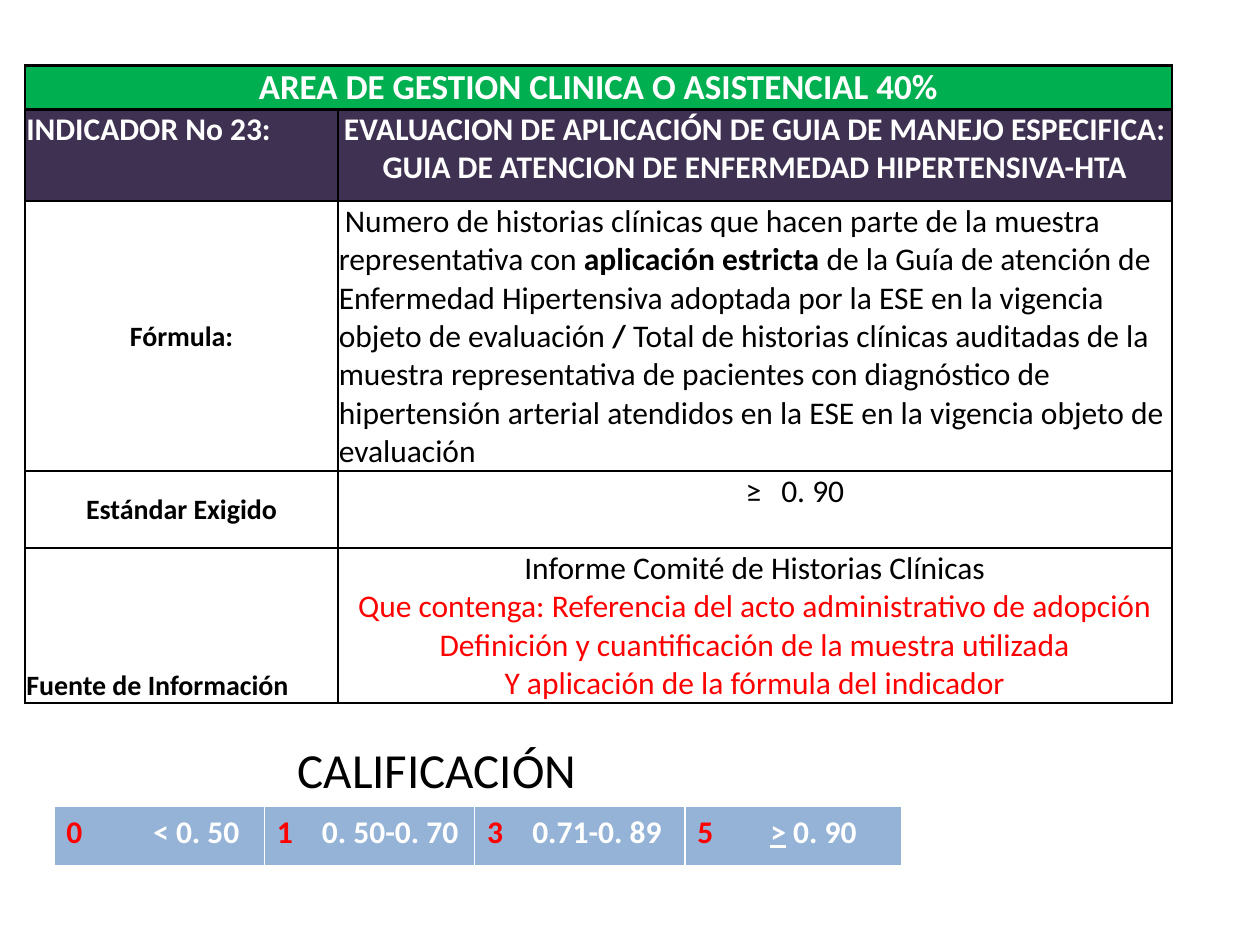
from dataclasses import dataclass

from lxml.etree import SubElement
from pptx import Presentation
from pptx.dml.color import RGBColor
from pptx.enum.text import MSO_ANCHOR, PP_ALIGN
from pptx.oxml.ns import qn
from pptx.util import Cm, Pt

COLORS = {
    "black": "000000",
    "white": "FFFFFF",
    "red": "FF0000",
    "green": "00B050",
    "purple": "3F3151",
    "blue": "95B3D7",
}
FONT = "Calibri"


@dataclass
class Span:
    text: str
    color: str = "black"
    bold: bool = False
    underline: bool = False


@dataclass
class Para:
    spans: list[Span]
    size: int = 18
    align: PP_ALIGN = PP_ALIGN.LEFT
    tabs: tuple[float, ...] = ()
    indent: float = 0


@dataclass
class CellContent:
    paras: list[Para]
    fill: str | None = None
    anchor: MSO_ANCHOR = MSO_ANCHOR.TOP


@dataclass
class Edge:
    tag: str
    color: str
    width: float


def write_para(para, content: Para) -> None:
    para.alignment = content.align
    properties = para._p.get_or_add_pPr()
    if content.indent:
        properties.set("indent", str(Cm(content.indent)))
    if content.tabs:
        stops = SubElement(properties, qn("a:tabLst"))
        for position in content.tabs:
            SubElement(stops, qn("a:tab"), pos=str(Cm(position)), algn="l")
    para.font.name = FONT
    para.font.size = Pt(content.size)
    for span in content.spans:
        run = para.add_run()
        run.text = span.text
        run.font.bold = span.bold
        run.font.color.rgb = RGBColor.from_string(COLORS[span.color])
        if span.underline:
            run.font.underline = True


def write_cell(cell, content: CellContent, margins: tuple, edges: list[Edge]) -> None:
    cell.margin_left, cell.margin_top, cell.margin_right, cell.margin_bottom = map(Cm, margins)
    cell.vertical_anchor = content.anchor
    properties = cell._tc.get_or_add_tcPr()
    for edge in edges:
        line = SubElement(properties, qn(f"a:{edge.tag}"), w=str(Pt(edge.width)))
        SubElement(SubElement(line, qn("a:solidFill")), qn("a:srgbClr"), val=COLORS[edge.color])
    if content.fill:
        cell.fill.solid()
        cell.fill.fore_color.rgb = RGBColor.from_string(COLORS[content.fill])
    else:
        cell.fill.background()
    for index, para_content in enumerate(content.paras):
        frame = cell.text_frame
        write_para(frame.add_paragraph() if index else frame.paragraphs[0], para_content)


def draw_table(page, left: float, top: float, widths: list[float], heights: list[float],
               rows: list[list[CellContent]], margins: tuple, edges: list[Edge]):
    table = page.shapes.add_table(len(heights), len(widths), Cm(left), Cm(top),
                                  Cm(sum(widths)), Cm(sum(heights))).table
    table.first_row = table.horz_banding = False
    for column, width in zip(table.columns, widths):
        column.width = Cm(width)
    for row, height in zip(table.rows, heights):
        row.height = Cm(height)
    for row_index, row in enumerate(rows):
        for column_index, content in enumerate(row):
            write_cell(table.cell(row_index, column_index), content, margins, edges)
    return table


def heading(text: str, fill: str, size: int = 18, align: PP_ALIGN = PP_ALIGN.CENTER,
            anchor: MSO_ANCHOR = MSO_ANCHOR.TOP) -> CellContent:
    return CellContent([Para([Span(text, "white", True)], size, align)], fill, anchor)


def label(text: str, align: PP_ALIGN = PP_ALIGN.CENTER,
          anchor: MSO_ANCHOR = MSO_ANCHOR.MIDDLE) -> CellContent:
    return CellContent([Para([Span(text, bold=True)], 16, align)], anchor=anchor)


def score(grade: str, tab: float, *limits: Span) -> CellContent:
    return CellContent([Para([Span(f"{grade}\t", "red", True), *limits], tabs=(tab,))], "blue")


def limit(text: str, underline: bool = False) -> Span:
    return Span(text, "white", True, underline)


FORMULA = Para([
    Span("Numero de historias clínicas que hacen parte de la muestra representativa con "),
    Span("aplicación estricta ", bold=True),
    Span("de la Guía de atención de Enfermedad Hipertensiva adoptada por la ESE "
         "en la vigencia objeto de evaluación "),
    Span("/", bold=True),
    Span(" Total de historias clínicas auditadas de la muestra representativa de pacientes "
         "con diagnóstico de hipertensión arterial atendidos en la ESE "
         "en la vigencia objeto de evaluación"),
], indent=0.12)

SOURCES = [
    ("Informe Comité de Historias Clínicas", "black"),
    ("Que contenga: Referencia del acto administrativo de adopción", "red"),
    ("Definición y cuantificación de la muestra utilizada", "red"),
    ("Y aplicación de la fórmula del indicador", "red"),
]

INDICATOR_ROWS = [
    [heading("AREA DE GESTION CLINICA O ASISTENCIAL 40%", "green", 20, anchor=MSO_ANCHOR.MIDDLE),
     CellContent([], "green")],
    [heading("INDICADOR No 23:", "purple", align=PP_ALIGN.LEFT),
     heading("EVALUACION DE APLICACIÓN DE GUIA DE MANEJO ESPECIFICA: "
             "GUIA DE ATENCION DE ENFERMEDAD HIPERTENSIVA-HTA", "purple")],
    [label("Fórmula:"), CellContent([FORMULA])],
    [label("Estándar Exigido"), CellContent([Para([Span("\t≥\t0. 90")], tabs=(8.2, 8.92))])],
    [label("Fuente de Información", PP_ALIGN.LEFT, MSO_ANCHOR.BOTTOM),
     CellContent([Para([Span(text, color)], align=PP_ALIGN.CENTER) for text, color in SOURCES],
                 anchor=MSO_ANCHOR.BOTTOM)],
]

SCORE_ROW = [
    score("0", 1.75, limit("< 0. 50")),
    score("1", 0.91, limit("0. 50-0. 70")),
    score("3", 0.91, limit("0.71-0. 89")),
    score("5", 1.47, limit(">", True), limit(" 0. 90")),
]


def main() -> None:
    deck = Presentation()
    deck.slide_width, deck.slide_height = Cm(25.4), Cm(19.05)
    page = deck.slides.add_slide(deck.slide_layouts[5])

    # Heading of the score scale
    title = page.shapes.title
    title.left, title.top, title.width, title.height = Cm(5.72), Cm(14.78), Cm(6.18), Cm(1.45)
    title.text_frame.word_wrap = False
    write_para(title.text_frame.paragraphs[0],
               Para([Span("CALIFICACIÓN")], 28, PP_ALIGN.CENTER))

    # Score scale
    white_edges = [Edge(tag, "white", 1) for tag in ("lnL", "lnR", "lnT")]
    draw_table(page, 1.09, 16.26, [4.24, 4.24, 4.24, 4.37], [1.22], [SCORE_ROW],
               (0.25, 0.13, 0.25, 0.13), white_edges + [Edge("lnB", "white", 3)])

    # Indicator sheet
    black_edges = [Edge(tag, "black", 1.5) for tag in ("lnL", "lnR", "lnT", "lnB")]
    sheet = draw_table(page, 0.51, 1.32, [6.3, 16.81], [0.86, 1.85, 5.36, 1.55, 3.07],
                       INDICATOR_ROWS, (0.02, 0.02, 0.02, 0), black_edges)
    sheet.cell(0, 0).merge(sheet.cell(0, 1))

    deck.save("out.pptx")


if __name__ == "__main__":
    main()
